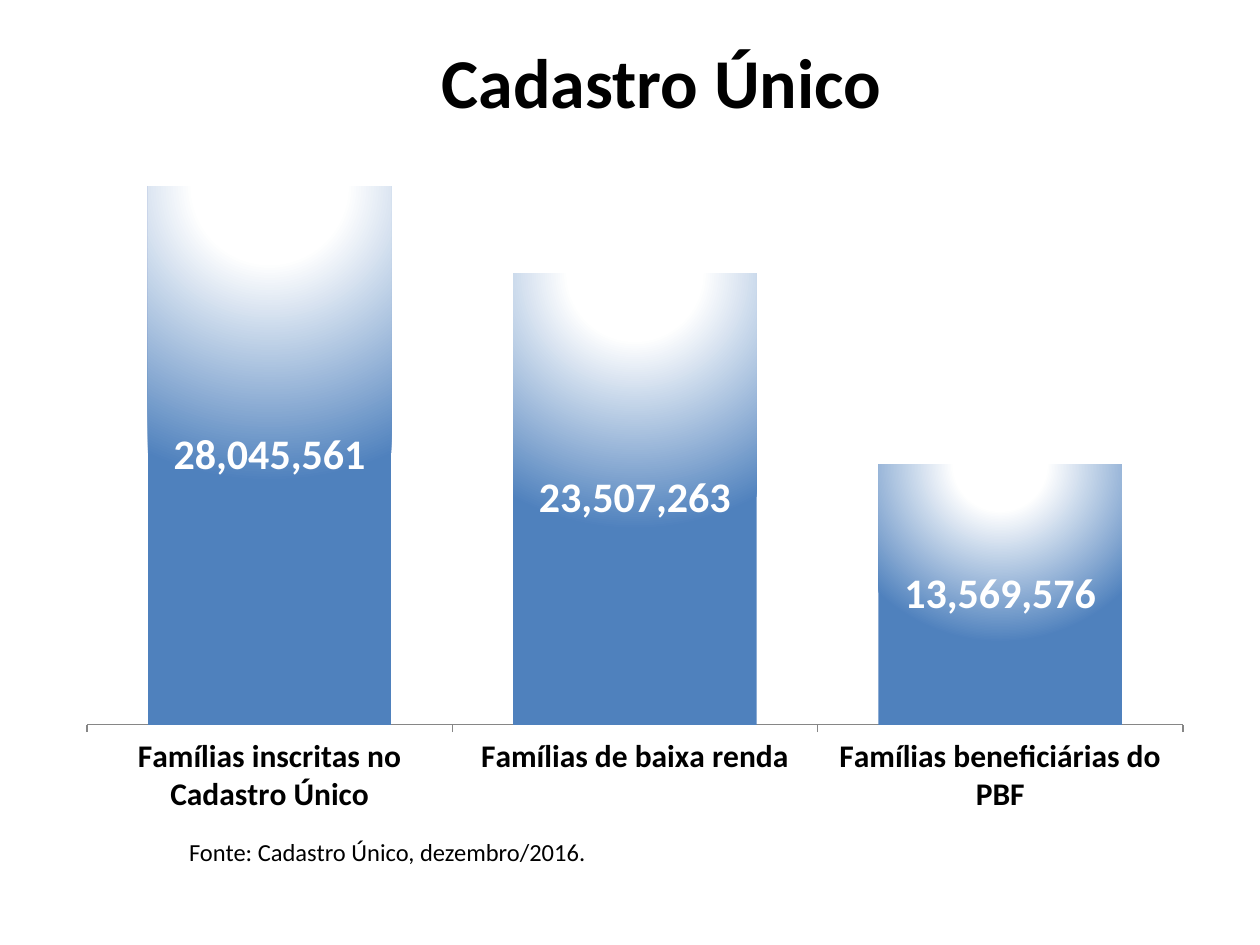
"""Build the Cadastro Único slide with its column chart of families."""
from lxml import etree
from pptx import Presentation
from pptx.chart.data import CategoryChartData
from pptx.dml.color import RGBColor
from pptx.enum.chart import XL_CHART_TYPE, XL_LABEL_POSITION, XL_TICK_MARK
from pptx.enum.text import MSO_ANCHOR, PP_ALIGN
from pptx.oxml import parse_xml
from pptx.oxml.ns import nsdecls, qn
from pptx.util import Inches, Pt

TITLE = "Cadastro Único"
SOURCE = "Fonte: Cadastro Único, dezembro/2016."
FAMILIES = [
    ("Famílias inscritas no Cadastro Único", 28045561),
    ("Famílias de baixa renda", 23507263),
    ("Famílias beneficiárias do PBF", 13569576),
]
COLORS = {"text": "000000", "bar": "4F81BD", "glow": "FFFFFF", "label": "FFFFFF", "axis": "868686"}
GLOW_STOPS = [(0, "glow"), (26, "glow"), (100, "bar")]
PLOT_AREA = {"x": 0.02, "y": 0.02, "w": 0.96, "h": 0.83}
FONT = "Calibri"


def set_font(font, size, color, bold=False):
    font.name = FONT
    font.size = Pt(size)
    font.bold = bold
    font.color.rgb = RGBColor.from_string(COLORS[color])


def add_text(slide, text, box, size, bold=False, wrap=True, align=PP_ALIGN.LEFT):
    tf = slide.shapes.add_textbox(*map(Inches, box)).text_frame
    tf.text = text
    tf.word_wrap = wrap
    tf.vertical_anchor = MSO_ANCHOR.MIDDLE
    p = tf.paragraphs[0]
    p.alignment = align
    set_font(p.runs[0].font, size, "text", bold)
    return tf


def set_glow(series):
    series.format.fill.solid()
    sp_pr = series._element.find(qn("c:spPr"))
    stops = "".join(
        f'<a:gs pos="{pos * 1000}"><a:srgbClr val="{COLORS[name]}"/></a:gs>'
        for pos, name in GLOW_STOPS
    )
    glow = parse_xml(
        f'<a:gradFill {nsdecls("a")}><a:gsLst>{stops}</a:gsLst><a:path path="circle">'
        '<a:fillToRect l="50000" t="-80000" r="50000" b="180000"/></a:path></a:gradFill>'
    )
    sp_pr.replace(sp_pr.find(qn("a:solidFill")), glow)


def set_plot_area(chart):
    plot_area = chart._chartSpace.chart.plotArea
    for old in plot_area.findall(qn("c:layout")):
        plot_area.remove(old)
    layout = etree.Element(qn("c:layout"))
    manual = etree.SubElement(layout, qn("c:manualLayout"))
    settings = {"layoutTarget": "inner", "xMode": "edge", "yMode": "edge", **PLOT_AREA}
    for name, value in settings.items():
        etree.SubElement(manual, qn(f"c:{name}")).set("val", str(value))
    plot_area.insert(0, layout)


def add_family_chart(slide, box):
    data = CategoryChartData(number_format="#,##0")
    data.categories = [name for name, _ in FAMILIES]
    data.add_series("Series 1", [count for _, count in FAMILIES])
    chart = slide.shapes.add_chart(
        XL_CHART_TYPE.COLUMN_CLUSTERED, *map(Inches, box), data
    ).chart
    chart.has_legend = False
    chart.has_title = False
    set_font(chart.font, 18, "text")
    set_plot_area(chart)

    axis = chart.category_axis
    axis.major_tick_mark = XL_TICK_MARK.OUTSIDE
    axis.format.line.color.rgb = RGBColor.from_string(COLORS["axis"])
    set_font(axis.tick_labels.font, 18, "text", bold=True)
    values = chart.value_axis
    values.minimum_scale, values.maximum_scale = 0, 30000000
    values.has_major_gridlines = False
    values.visible = False

    plot = chart.plots[0]
    plot.gap_width = 50
    plot.vary_by_categories = False
    series = plot.series[0]
    set_glow(series)
    labels = series.data_labels
    labels.show_value = True
    labels.position = XL_LABEL_POSITION.CENTER
    labels.number_format = "#,##0"
    labels.number_format_is_linked = False
    set_font(labels.font, 24, "label", bold=True)


def main():
    prs = Presentation()
    prs.slide_width, prs.slide_height = Inches(10), Inches(7.5)
    slide = prs.slides.add_slide(prs.slide_layouts[6])
    add_text(slide, TITLE, (0.8, 0.21, 8.9, 0.86), 40, bold=True, align=PP_ALIGN.CENTER)
    source = add_text(slide, SOURCE, (0.83, 6.59, 3.95, 0.34), 14, wrap=False)
    source.margin_left = Inches(0.67)
    add_family_chart(slide, (0.51, 1.07, 9.06, 5.51))
    prs.save("out.pptx")


if __name__ == "__main__":
    main()
